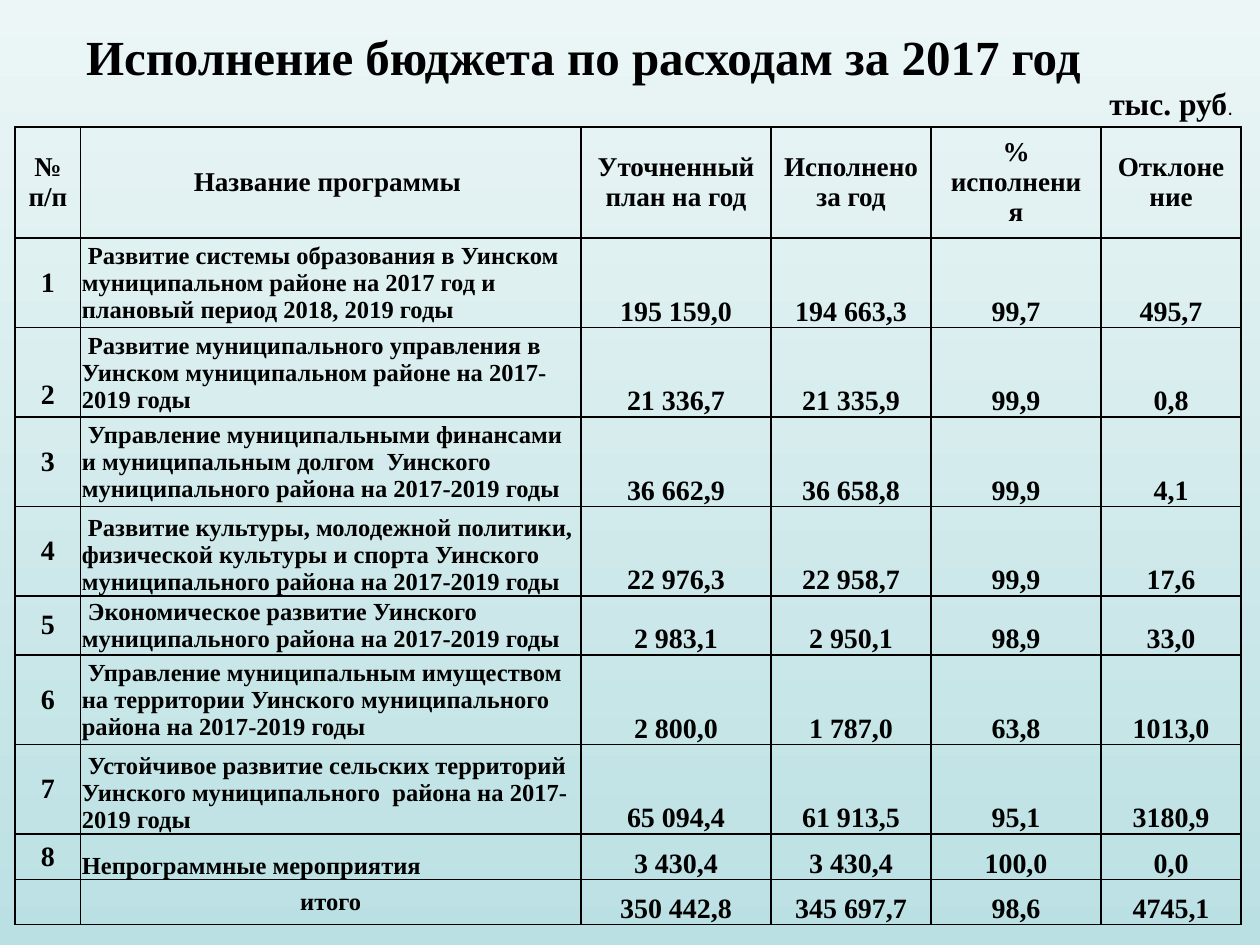
from dataclasses import dataclass

import lxml.etree
import pptx
import pptx.dml.color
import pptx.enum.text
import pptx.oxml.ns
import pptx.util

Inches = pptx.util.Inches
Align = pptx.enum.text.PP_ALIGN
Anchor = pptx.enum.text.MSO_ANCHOR

COLORS = {"top": "ECF6F6", "bottom": "BBE0E3", "ink": "000000"}
SERIF = {"name": "Times New Roman", "bold": True}
COLUMN_WIDTHS = [0.52, 3.97, 1.51, 1.27, 1.35, 1.11]
HEADER_HEIGHT = 0.88
HEADERS = ["№ п/п", "Название программы ", "Уточненный план на год",
           "Исполнено за год", "% исполнения", "Отклонение"]
NARROW_MARGINS = {"margin_left": Inches(0.01), "margin_right": Inches(0.01),
                  "margin_top": Inches(0.01), "margin_bottom": 0}


@dataclass
class Program:
    number: str
    name: str
    values: list[str]
    height: float = 0.71
    number_anchor: Anchor = Anchor.MIDDLE
    name_anchor: Anchor = Anchor.MIDDLE
    name_align: Align = Align.LEFT


PROGRAMS = [
    Program("1", " Развитие системы образования в Уинском муниципальном районе "
            "на 2017 год и плановый период 2018, 2019 годы",
            ["195 159,0", "194 663,3", "99,7", "495,7"]),
    Program("2", " Развитие муниципального управления в Уинском муниципальном "
            "районе на 2017-2019 годы",
            ["21 336,7", "21 335,9", "99,9", "0,8"], number_anchor=Anchor.BOTTOM),
    Program("3", " Управление муниципальными финансами и муниципальным долгом  "
            "Уинского муниципального района на 2017-2019 годы",
            ["36 662,9", "36 658,8", "99,9", "4,1"]),
    Program("4", " Развитие культуры, молодежной политики, физической культуры "
            "и спорта Уинского муниципального района на 2017-2019 годы",
            ["22 976,3", "22 958,7", "99,9", "17,6"], name_anchor=Anchor.BOTTOM),
    Program("5", " Экономическое развитие Уинского муниципального района "
            "на 2017-2019 годы",
            ["2 983,1", "2 950,1", "98,9", "33,0"], height=0.47),
    Program("6", " Управление муниципальным имуществом на территории Уинского "
            "муниципального района на 2017-2019 годы",
            ["2 800,0", "1 787,0", "63,8", "1013,0"]),
    Program("7", " Устойчивое развитие сельских территорий Уинского "
            "муниципального  района на 2017-2019 годы",
            ["65 094,4", "61 913,5", "95,1", "3180,9"], name_anchor=Anchor.BOTTOM),
    Program("8", "Непрограммные мероприятия",
            ["3 430,4", "3 430,4", "100,0", "0,0"], height=0.36,
            name_anchor=Anchor.BOTTOM),
    Program("", "итого", ["350 442,8", "345 697,7", "98,6", "4745,1"],
            height=0.36, name_align=Align.CENTER),
]


def rgb(name: str) -> pptx.dml.color.RGBColor:
    return pptx.dml.color.RGBColor.from_string(COLORS[name])


def set_values(target, values: dict) -> None:
    for attribute, value in values.items():
        setattr(target, attribute, value)


def add_run(paragraph, text: str, size: float, **font_values) -> None:
    run = paragraph.add_run()
    run.text = text
    set_values(run.font, {**SERIF, "size": pptx.util.Pt(size), **font_values})
    run.font.color.rgb = rgb("ink")


def draw_borders(cell) -> None:
    properties = cell._tc.get_or_add_tcPr()
    for position, side in enumerate(("lnL", "lnR", "lnT", "lnB")):
        line = lxml.etree.Element(pptx.oxml.ns.qn(f"a:{side}"), w=str(pptx.util.Pt(1)))
        fill = lxml.etree.SubElement(line, pptx.oxml.ns.qn("a:solidFill"))
        lxml.etree.SubElement(fill, pptx.oxml.ns.qn("a:srgbClr"), val=COLORS["ink"])
        properties.insert(position, line)


def fill_cell(cell, text: str, size: float, align: Align = Align.CENTER,
              anchor: Anchor = Anchor.MIDDLE, narrow: bool = True) -> None:
    cell.fill.background()
    draw_borders(cell)
    cell.vertical_anchor = anchor
    if narrow:
        set_values(cell, NARROW_MARGINS)
    paragraph = cell.text_frame.paragraphs[0]
    paragraph.alignment = align
    if text:
        add_run(paragraph, text, size)


def add_budget_table(slide) -> None:
    heights = [HEADER_HEIGHT] + [program.height for program in PROGRAMS]
    table = slide.shapes.add_table(
        len(heights), len(COLUMN_WIDTHS), Inches(0.12), Inches(1.01),
        Inches(sum(COLUMN_WIDTHS)), Inches(sum(heights))).table
    set_values(table, {"first_row": False, "horz_banding": False})
    for column, width in zip(table.columns, COLUMN_WIDTHS):
        column.width = Inches(width)
    for row, height in zip(table.rows, heights):
        row.height = Inches(height)

    for index, header in enumerate(HEADERS):
        fill_cell(table.cell(0, index), header, 15.5, narrow=False)
    for index, program in enumerate(PROGRAMS, start=1):
        fill_cell(table.cell(index, 0), program.number, 16,
                  anchor=program.number_anchor, narrow=not program.number)
        fill_cell(table.cell(index, 1), program.name, 14,
                  program.name_align, program.name_anchor)
        for column, value in enumerate(program.values, start=2):
            fill_cell(table.cell(index, column), value, 16, anchor=Anchor.BOTTOM)


def add_centred_text(slide, left: float, top: float, width: float, height: float,
                     text: str, size: float):
    """Add a one-line text box and return its text frame."""
    frame = slide.shapes.add_textbox(
        Inches(left), Inches(top), Inches(width), Inches(height)).text_frame
    frame.word_wrap = True
    frame.paragraphs[0].alignment = Align.CENTER
    add_run(frame.paragraphs[0], text, size)
    return frame


def set_background(slide) -> None:
    fill = slide.background.fill
    fill.gradient()
    fill.gradient_angle = 270
    for stop, name, position in zip(fill.gradient_stops, ("top", "bottom"), (0, 1)):
        stop.color.rgb = rgb(name)
        stop.position = position


def main() -> None:
    presentation = pptx.Presentation()
    set_values(presentation, {"slide_width": Inches(10), "slide_height": Inches(7.5)})
    slide = presentation.slides.add_slide(presentation.slide_layouts[6])
    set_background(slide)
    add_budget_table(slide)
    title = add_centred_text(slide, 0.39, 0.16, 8.67, 0.57,
                             "Исполнение бюджета по расходам за 2017 год", 28)
    title.margin_right = Inches(0.29)
    unit = add_centred_text(slide, 8.59, 0.62, 1.41, 0.4, "тыс. руб", 18)
    add_run(unit.paragraphs[0], ".", 12, name="Arial", bold=False)
    presentation.save("out.pptx")


if __name__ == "__main__":
    main()
